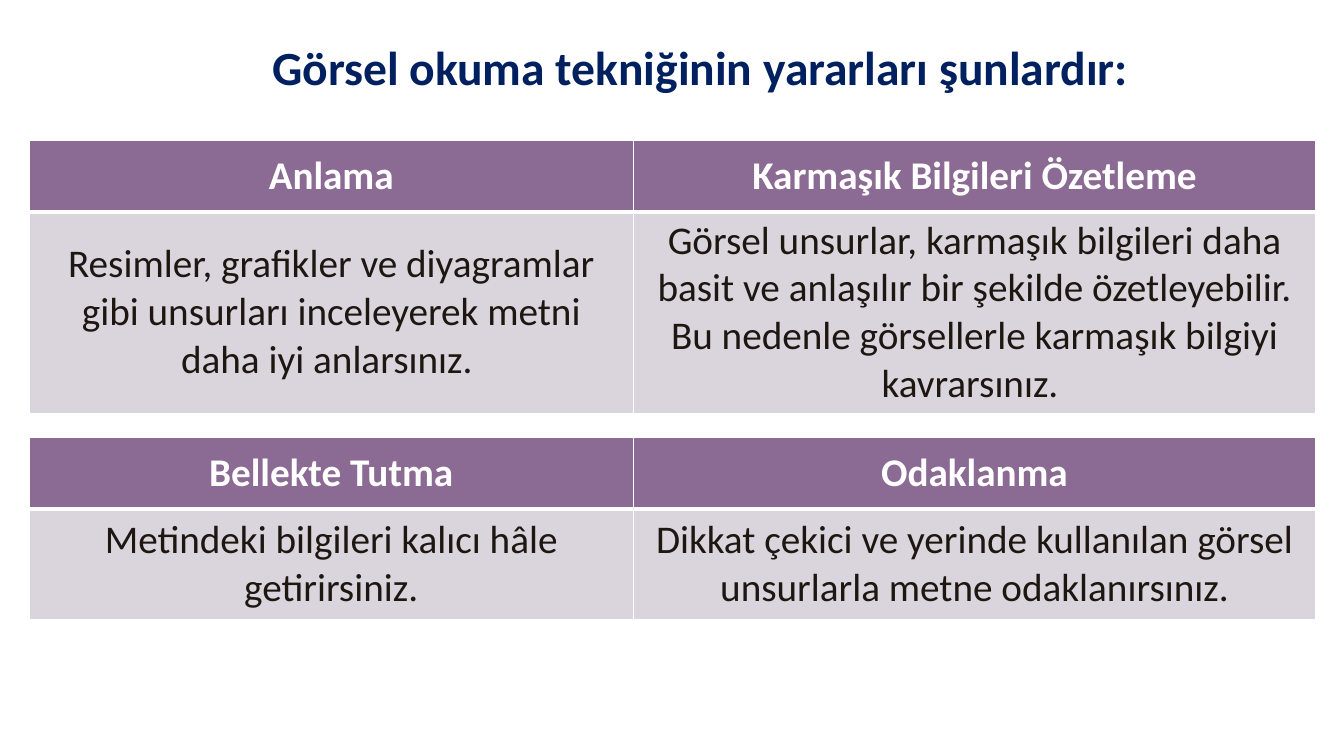
from lxml import etree
from pptx import Presentation, util as u
from pptx.dml.color import RGBColor
from pptx.enum import text as t
from pptx.oxml.ns import qn

WIDE, HIGH = u.Inches(13.33), u.Inches(7.5)
LEFT = u.Inches(0.29)
COLS = [u.Inches(5.99), u.Inches(6.77)]
HEAD = u.Inches(0.71)
FONT = "Calibri"
HUES = {"title": "002060", "head": "8B6A94", "body": "DAD4DC",
        "ink": "1D1611", "white": "FFFFFF"}

# Each table: top and body height in inches, headings, body texts
TABLES = [
    (1.39, 1.97,
     ["Anlama", "Karmaşık Bilgileri Özetleme"],
     ["Resimler, grafikler ve diyagramlar gibi unsurları inceleyerek "
      "metni daha iyi anlarsınız. ",
      "Görsel unsurlar, karmaşık bilgileri daha basit ve anlaşılır bir "
      "şekilde özetleyebilir. Bu nedenle görsellerle karmaşık bilgiyi "
      "kavrarsınız. "]),
    (4.34, 1.1,
     ["Bellekte Tutma", "Odaklanma"],
     ["Metindeki bilgileri kalıcı hâle getirirsiniz.",
      "Dikkat çekici ve yerinde kullanılan görsel unsurlarla metne "
      "odaklanırsınız."]),
]


def hue(name):
    return RGBColor.from_string(HUES[name])


def write(frame, words, size, color, bold):
    para = frame.paragraphs[0]
    para.alignment = t.PP_ALIGN.CENTER
    run = para.add_run()
    run.text = words
    font = run.font
    font.name, font.size, font.bold = FONT, u.Pt(size), bold
    font.color.rgb = hue(color)
    return para


def edge(cell, widths):
    """Draw white borders; widths maps a side (L, R, T, B) to points."""
    props = cell._tc.get_or_add_tcPr()
    for side, width in widths.items():
        line = etree.SubElement(props, qn(f"a:ln{side}"), w=str(u.Pt(width)))
        fill = etree.SubElement(line, qn("a:solidFill"))
        etree.SubElement(fill, qn("a:srgbClr"), val=HUES["white"])


def fill_row(cells, words, back, color, bold, widths):
    for cell, phrase in zip(cells, words):
        edge(cell, widths)
        cell.fill.solid()
        cell.fill.fore_color.rgb = hue(back)
        cell.vertical_anchor = t.MSO_ANCHOR.MIDDLE
        write(cell.text_frame, phrase, 28, color, bold)


def add_grid(slide, top, deep, heads, texts):
    rows = [HEAD, u.Inches(deep)]
    grid = slide.shapes.add_table(2, 2, LEFT, u.Inches(top),
                                  sum(COLS), sum(rows)).table
    grid.first_row = grid.horz_banding = False
    for col, width in zip(grid.columns, COLS):
        col.width = width
    for row, height in zip(grid.rows, rows):
        row.height = height
    fill_row(grid.rows[0].cells, heads, "head", "white", True,
             {"L": 1, "R": 1, "T": 1, "B": 3})
    fill_row(grid.rows[1].cells, texts, "body", "ink", False,
             {"L": 1, "R": 1, "B": 1})


def set_title(slide, words):
    title = slide.shapes.title
    title.left, title.top = u.Inches(1), u.Inches(0.36)
    title.width, title.height = u.Inches(11.89), u.Inches(0.65)
    frame = title.text_frame
    frame.word_wrap = True
    frame.auto_size = t.MSO_AUTO_SIZE.NONE
    frame.vertical_anchor = t.MSO_ANCHOR.BOTTOM
    frame.margin_left = frame.margin_right = u.Inches(0.13)
    frame.margin_top = frame.margin_bottom = u.Inches(0.07)
    write(frame, words, 34, "title", True).line_spacing = 0.85


def main():
    deck = Presentation()
    deck.slide_width, deck.slide_height = WIDE, HIGH
    slide = deck.slides.add_slide(deck.slide_layouts[5])
    set_title(slide, "Görsel okuma tekniğinin yararları şunlardır:")
    for table in TABLES:
        add_grid(slide, *table)
    deck.save("out.pptx")


if __name__ == "__main__":
    main()
